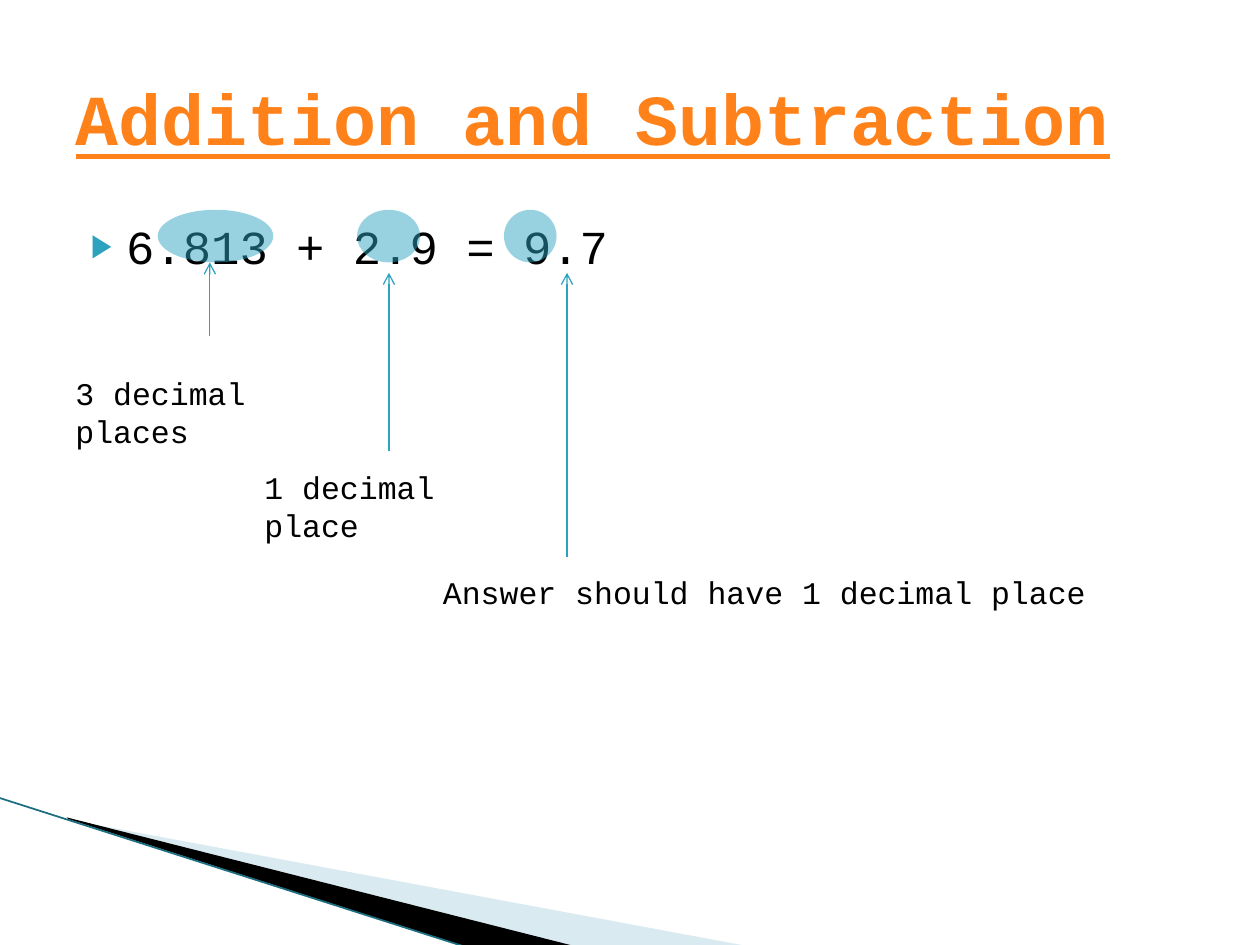
from dataclasses import dataclass

from lxml import etree
from pptx import Presentation
from pptx.dml.color import RGBColor
from pptx.enum.shapes import MSO_CONNECTOR, MSO_SHAPE
from pptx.enum.text import MSO_ANCHOR, MSO_AUTO_SIZE, PP_ALIGN
from pptx.oxml.ns import qn
from pptx.util import Cm, Pt

STRAIGHT = MSO_CONNECTOR.STRAIGHT
OVAL = MSO_SHAPE.OVAL
MIDDLE, TOP = MSO_ANCHOR.MIDDLE, MSO_ANCHOR.TOP
LEFT = PP_ALIGN.LEFT


@dataclass(frozen=True)
class Theme:
    font: str = "Courier New"
    title: str = "FF8119"
    text: str = "000000"
    accent: str = "2DA2BF"
    wedge_light: str = "A0CBDC"
    wedge_dark: str = "000000"
    edge: str = "1A6E80"
    title_size: int = 41
    sum_size: int = 27
    label_size: int = 18


theme = Theme()


def style_text(paragraph, size, color):
    paragraph.alignment = LEFT
    paragraph.font.name = theme.font
    paragraph.font.size = Pt(size)
    paragraph.font.color.rgb = RGBColor.from_string(color)


def fill_plain(shape, color, opacity=100):
    shape.shadow.inherit = False
    shape.line.fill.background()
    shape.fill.solid()
    shape.fill.fore_color.rgb = RGBColor.from_string(color)
    if opacity < 100:
        tint = shape.fill._xPr.find(".//" + qn("a:srgbClr"))
        etree.SubElement(tint, qn("a:alpha"), val=str(opacity * 1000))


prs = Presentation()
prs.slide_width, prs.slide_height = Cm(25.4), Cm(19.05)
slide = prs.slides.add_slide(prs.slide_layouts[1])
shapes = slide.shapes

# Corner wedges
wedges = [
    ([(1.4, 16.53), (15.11, 19.08), (11.58, 19.08), (1.4, 16.51)], theme.wedge_light, 40),
    ([(1.35, 16.48), (11.61, 19.08), (9.45, 19.1), (1.37, 16.51)], theme.wedge_dark, 100),
]
for corners, color, opacity in wedges:
    points = [(Cm(x), Cm(y)) for x, y in corners]
    outline = shapes.build_freeform(*points[0])
    outline.add_line_segments(points[1:])
    fill_plain(outline.convert_to_shape(), color, opacity)

# Title
title = shapes.title
title.left, title.top, title.width, title.height = Cm(1.27), Cm(0.76), Cm(22.86), Cm(3.18)
title.text_frame.text = "Addition and Subtraction"
title.text_frame.vertical_anchor = MIDDLE
heading = title.text_frame.paragraphs[0]
style_text(heading, theme.title_size, theme.title)
heading.font.bold = True
heading.font.underline = True

# Sum, as a bulleted line
body = slide.placeholders[1]
body.left, body.top, body.width, body.height = Cm(1.27), Cm(4.11), Cm(22.86), Cm(12.57)
body.text_frame.text = "6.813 + 2.9 = 9.7"
body.text_frame.vertical_anchor = TOP
body.text_frame.margin_top = Cm(0.27)
sum_line = body.text_frame.paragraphs[0]
sum_line.space_before = Pt(0)
bullet = sum_line._p.get_or_add_pPr()
bullet.set("marL", str(Cm(1.02)))
bullet.set("indent", str(Cm(-0.71)))
bullet_color = etree.SubElement(bullet, qn("a:buClr"))
etree.SubElement(bullet_color, qn("a:srgbClr"), val=theme.accent)
etree.SubElement(bullet, qn("a:buSzPct"), val="68000")
etree.SubElement(bullet, qn("a:buChar"), char="▶")
style_text(sum_line, theme.sum_size, theme.text)

# Highlights: oval (left, width), arrow (x, start, tip), label (left, top, width)
highlights = [
    ((3.18, 2.33), (4.23, 6.77, 5.29), (1.27, 7.41, 5.72), "3 decimal places"),
    ((7.2, 1.27), (7.84, 9.1, 5.5), (5.08, 9.31, 5.72), "1 decimal place"),
    ((10.16, 1.06), (11.43, 11.22, 5.5), (8.68, 11.43, 14.39),
     "Answer should have 1 decimal place"),
]
lines = [(-0.03, 16.08, 9.42, 19.1, theme.edge, 1, False)]
for (oval_left, oval_width), (x, start, tip), (left, top, width), wording in highlights:
    oval = shapes.add_shape(OVAL, Cm(oval_left), Cm(4.23), Cm(oval_width), Cm(1.06))
    fill_plain(oval, theme.accent, 49)
    lines.append((x, start, x, tip, theme.accent, 0.75, True))

    label = shapes.add_textbox(Cm(left), Cm(top), Cm(width), Cm(1.02)).text_frame
    label.word_wrap = True
    label.auto_size = MSO_AUTO_SIZE.SHAPE_TO_FIT_TEXT
    label.text = wording
    style_text(label.paragraphs[0], theme.label_size, theme.text)

# Wedge edge and arrows
for x1, y1, x2, y2, color, weight, has_head in lines:
    connector = shapes.add_connector(STRAIGHT, Cm(x1), Cm(y1), Cm(x2), Cm(y2))
    connector.line.color.rgb = RGBColor.from_string(color)
    connector.line.width = Pt(weight)
    if has_head:
        etree.SubElement(connector.line._get_or_add_ln(), qn("a:tailEnd"), type="arrow")
    etree.SubElement(connector._element.spPr, qn("a:effectLst"))

prs.save("out.pptx")
